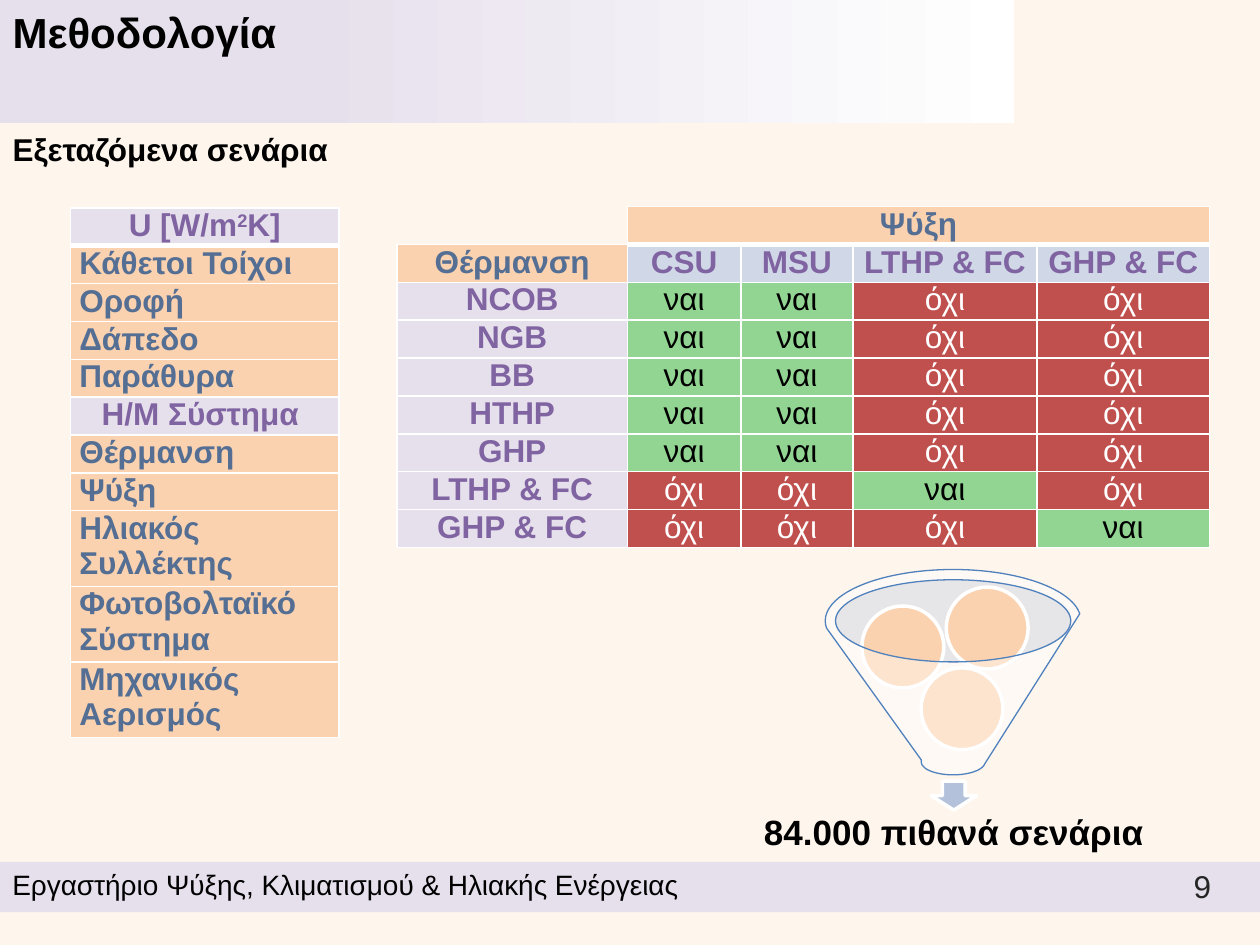
from lxml import etree
from pptx import Presentation
from pptx.dml.color import RGBColor
from pptx.enum import shapes, text
from pptx.oxml import ns
from pptx.util import Inches, Pt

COLORS = {
    "background": "FEF5ED", "lilac": "E6E0EC", "white": "FFFFFF", "black": "000000",
    "number": "262626", "peach": "FBD2B0", "purple": "8064A2", "slate": "546F93",
    "ice": "D0D8E8", "green": "92D492", "red": "C0504D", "rim": "C2CDE1",
    "arrow": "B3C1DB", "outline": "4F81BD",
}
ALIGN = text.PP_ALIGN
ANCHOR = text.MSO_ANCHOR
SHAPE = shapes.MSO_SHAPE


def color(name):
    return RGBColor.from_string(COLORS[name])


class SlideBuilder:
    font = "Arial"

    def __init__(self, slide):
        self.slide = slide
        self.canvas = slide.shapes
        background = slide.background.fill
        background.solid()
        background.fore_color.rgb = color("background")

    def place(self, shape, box):
        shape.left, shape.top, shape.width, shape.height = map(Inches, box)

    def add_runs(self, frame, runs, size, ink="black", bold=False, align=ALIGN.LEFT):
        paragraph = frame.paragraphs[0]
        paragraph.alignment = align
        for words, baseline in runs:
            run = paragraph.add_run()
            run.text = words
            run.font.name = self.font
            run.font.size = Pt(size)
            run.font.bold = bold
            run.font.color.rgb = color(ink)
            if baseline:
                run._r.get_or_add_rPr().set("baseline", str(baseline * 1000))
        return paragraph

    def placeholder(self, index, words, box, size):
        holder = self.slide.placeholders[index]
        self.place(holder, box)
        frame = holder.text_frame
        frame.auto_size = text.MSO_AUTO_SIZE.NONE
        frame.vertical_anchor = ANCHOR.TOP
        properties = frame.paragraphs[0]._p.get_or_add_pPr()
        properties.set("marL", "0")
        properties.set("indent", "0")
        etree.SubElement(properties, ns.qn("a:buNone"))
        paragraph = self.add_runs(frame, [(words, 0)], size, bold=True)
        paragraph.space_before = Pt(0)

    def label(self, words, box, size, ink="black", bold=False, align=ALIGN.LEFT,
              anchor=ANCHOR.TOP):
        holder = self.canvas.add_textbox(*map(Inches, box))
        holder.text_frame.word_wrap = True
        holder.text_frame.vertical_anchor = anchor
        self.add_runs(holder.text_frame, [(words, 0)], size, ink, bold, align)

    def shape(self, kind, box, fill, alpha=100, line=None, weight=1):
        shape = self.canvas.add_shape(kind, *map(Inches, box))
        shape.shadow.inherit = False
        shape.fill.solid()
        shape.fill.fore_color.rgb = color(fill)
        if alpha < 100:
            tint = shape.element.spPr.find(".//" + ns.qn("a:srgbClr"))
            etree.SubElement(tint, ns.qn("a:alpha"), val=str(alpha * 1000))
        if line:
            shape.line.color.rgb = color(line)
            shape.line.width = Pt(weight)
        else:
            shape.line.fill.background()
        return shape

    def banner(self, box):
        band = self.shape(SHAPE.RECTANGLE, box, "lilac")
        band.fill.gradient()
        band.fill.gradient_angle = 0
        for stop, (position, tone) in zip(band.fill.gradient_stops,
                                          [(0.3, "lilac"), (1, "white")]):
            stop.position = position
            stop.color.rgb = color(tone)
        self.slide.shapes[0].element.addprevious(band.element)

    def table(self, left, top, widths, heights):
        frame = self.canvas.add_table(len(heights), len(widths), Inches(left), Inches(top),
                                      Inches(sum(widths)), Inches(sum(heights)))
        grid = frame.table
        grid.first_row = grid.horz_banding = False
        for column, width in zip(grid.columns, widths):
            column.width = Inches(width)
        for row, height in zip(grid.rows, heights):
            row.height = Inches(height)
        return grid

    def cell(self, cell, runs, fill, ink="black", bold=True, align=ALIGN.CENTER,
             bottom=1, bordered=True):
        cell.margin_left = cell.margin_right = Inches(0.07)
        cell.margin_top = cell.margin_bottom = 0
        cell.fill.solid()
        cell.fill.fore_color.rgb = color(fill)
        self.add_runs(cell.text_frame, runs, 18, ink, bold, align)
        properties = cell._tc.get_or_add_tcPr()
        for order, side in enumerate("LRTB"):
            weight = bottom if side == "B" else 1
            border = etree.Element(ns.qn(f"a:ln{side}"), w=str(int(Pt(weight))))
            if bordered:
                paint = etree.SubElement(border, ns.qn("a:solidFill"))
                etree.SubElement(paint, ns.qn("a:srgbClr"), val=COLORS["white"])
            else:
                etree.SubElement(border, ns.qn("a:noFill"))
            properties.insert(order, border)


def add_compatibility(page):
    cooling = ["CSU", "MSU", "LTHP & FC", "GHP & FC"]
    allowed = {name: cooling[:2] for name in ["NCOB", "NGB", "BB", "HTHP", "GHP"]}
    allowed.update({name: [name] for name in cooling[2:]})
    grid = page.table(3.15, 1.64, [1.83, 0.9, 0.89, 1.46, 1.37], [0.28] * 9)
    grid.cell(0, 1).merge(grid.cell(0, 4))
    page.cell(grid.cell(0, 0), [], "background", bordered=False)
    page.cell(grid.cell(0, 1), [("Ψύξη", 0)], "peach", "slate", bottom=3)
    page.cell(grid.cell(1, 0), [("Θέρμανση", 0)], "peach", "slate")
    for column, cooler in enumerate(cooling, 1):
        page.cell(grid.cell(1, column), [(cooler, 0)], "ice", "purple")
    for row, (heater, matches) in enumerate(allowed.items(), 2):
        page.cell(grid.cell(row, 0), [(heater, 0)], "lilac", "purple")
        for column, cooler in enumerate(cooling, 1):
            answer = ("ναι", "green", "black") if cooler in matches else ("όχι", "red", "white")
            words, fill, ink = answer
            page.cell(grid.cell(row, column), [(words, 0)], fill, ink, bold=False)


def add_parameters(page):
    sections = [
        ([("U [W/m", 0), ("2", 30), ("K]", 0)], 3, ALIGN.LEFT,
         ["Κάθετοι Τοίχοι", "Οροφή", "Δάπεδο", "Παράθυρα"]),
        ([("Η/Μ Σύστημα ", 0)], 1, ALIGN.JUSTIFY,
         ["Θέρμανση", "Ψύξη", "Ηλιακός Συλλέκτης", "Φωτοβολταϊκό Σύστημα",
          "Μηχανικός Αερισμός"]),
    ]
    grid = page.table(0.56, 1.65, [2.13], [0.28] * 8 + [0.56] * 3)
    cells = grid.iter_cells()
    for heading, bottom, align, parameters in sections:
        page.cell(next(cells), heading, "lilac", "purple", bottom=bottom)
        for parameter in parameters:
            page.cell(next(cells), [(parameter, 0)], "peach", "slate", align=align)


def add_funnel(page):
    page.canvas = page.slide.shapes.add_group_shape().shapes
    page.shape(SHAPE.OVAL, (6.63, 4.6, 1.87, 0.65), "rim", alpha=40)
    page.shape(SHAPE.DOWN_ARROW, (7.39, 6.2, 0.36, 0.23), "arrow", line="white", weight=2)
    page.label("84.000 πιθανά σενάρια", (5.61, 6.38, 3.92, 0.44), 20, bold=True,
               align=ALIGN.CENTER, anchor=ANCHOR.MIDDLE)
    for left, top in [(7.31, 5.3), (6.84, 4.81), (7.51, 4.66)]:
        page.shape(SHAPE.OVAL, (left, top, 0.65, 0.65), "peach", line="white", weight=2)
    page.shape(SHAPE.FUNNEL, (6.55, 4.52, 2.03, 1.63), "white", alpha=40,
               line="outline", weight=0.75)


def main():
    deck = Presentation()
    deck.slide_width, deck.slide_height = Inches(10), Inches(7.5)
    page = SlideBuilder(deck.slides.add_slide(deck.slide_layouts[1]))
    page.banner((0, 0, 8.05, 0.98))
    page.shape(SHAPE.RECTANGLE, (0, 6.84, 10, 0.4), "lilac")
    page.label("Εργαστήριο Ψύξης, Κλιματισμού & Ηλιακής Ενέργειας", (0, 6.84, 6.47, 0.37), 16)
    page.label("9", (7.46, 6.83, 2.25, 0.4), 18, "number", align=ALIGN.RIGHT)
    page.placeholder(0, "Μεθοδολογία", (0, 0, 6.29, 0.55), 24)
    page.placeholder(1, "Εξεταζόμενα σενάρια", (0, 0.98, 6.17, 0.4), 18)
    add_compatibility(page)
    add_parameters(page)
    add_funnel(page)
    deck.save("out.pptx")


if __name__ == "__main__":
    main()
